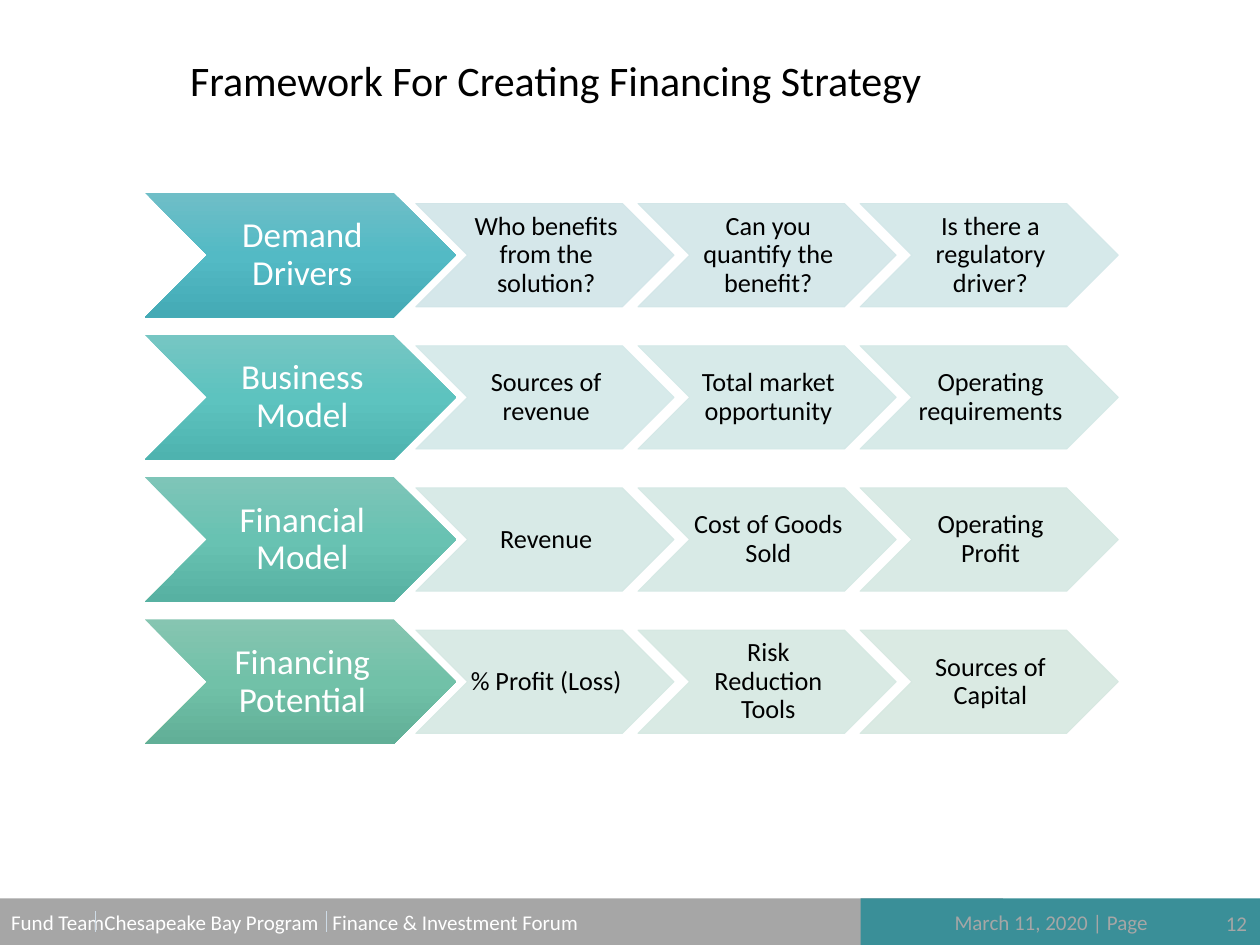
import pptx
import pptx.util
import pptx.dml.color
import pptx.enum.shapes
import pptx.enum.text
import pptx.oxml
import pptx.oxml.ns
import lxml.etree

Inches, Pt = pptx.util.Inches, pptx.util.Pt
SHAPE = pptx.enum.shapes.MSO_SHAPE
ALIGN = pptx.enum.text.PP_ALIGN
ANCHOR = pptx.enum.text.MSO_ANCHOR
qn = pptx.oxml.ns.qn

# Content: stage, its gradient, then steps with their tints
TITLE = "Framework For Creating Financing Strategy"
ROWS = [
    ("Demand Drivers", ("6FBEC7", "53BAC5", "44AAB5"),
     [("Who benefits from the solution?", "D1E5E8"),
      ("Can you quantify the benefit?", "D2E6E8"),
      ("Is there a regulatory driver?", "D2E7E8")]),
    ("Business Model", ("76C6C3", "5DC3BF", "4EB3AF"),
     [("Sources of revenue", "D3E8E8"),
      ("Total market opportunity", "D3E8E7"),
      ("Operating requirements", "D3E8E6")]),
    ("Financial Model", ("7EC5B8", "68C2B2", "57B1A2"),
     [("Revenue", "D4E8E5"),
      ("Cost of Goods Sold", "D4E8E4"),
      ("Operating Profit", "D5E8E3")]),
    ("Financing Potential", ("86C5B1", "71C1A8", "61AF97"),
     [("% Profit (Loss)", "D5E8E3"),
      ("Risk Reduction Tools", "D5E8E2"),
      ("Sources of Capital", "D6E8E1")]),
]
FOOTER = ["Fund Team", "Chesapeake Bay Program", "Finance & Investment Forum"]
FOOTER_TABS = [0.74, 2.55]
SEPARATORS = [0.76, 2.59]
DATE = "March 11, 2020 | Page"
PAGE_NUMBER = "12"

THEME = {
    "font": "Calibri", "dark": "000000", "light": "FFFFFF",
    "gray": "A6A6A6", "teal": "3A8F98", "rule": "CEDBE6",
    "title": 24, "stage": 20, "step": 15, "footer": 12,
    "opacity": 90, "spacing": 0.9,
}

# Layout in inches
LEFT, TOP = 1.15, 1.53
STAGE_W, STAGE_H = 2.47, 0.99
STEP_LEFT, STEP_W, STEP_H = 3.3, 2.05, 0.82
ROW_PITCH = STAGE_H * 1.14
STEP_PITCH = STEP_W * 0.86
FOOTER_TOP, FOOTER_H = 7.13, 0.38

deck = pptx.Presentation()
deck.slide_width, deck.slide_height = Inches(10), Inches(7.5)
page = deck.slides.add_slide(deck.slide_layouts[6])


def rgb(value):
    return pptx.dml.color.RGBColor.from_string(value)


def write(box, text, size, color, align=ALIGN.LEFT, anchor=ANCHOR.TOP,
          insets=(0.1, 0.05, 0.1, 0.05), spacing=None, tabs=()):
    frame = box.text_frame
    frame.word_wrap = True
    frame.vertical_anchor = anchor
    (frame.margin_left, frame.margin_top,
     frame.margin_right, frame.margin_bottom) = map(Inches, insets)
    para = frame.paragraphs[0]
    para.alignment = align
    if spacing:
        para.line_spacing = spacing
    if tabs:
        stops = lxml.etree.SubElement(para._p.get_or_add_pPr(), qn("a:tabLst"))
        for tab in tabs:
            lxml.etree.SubElement(stops, qn("a:tab"), pos=str(Inches(tab)), algn="l")
    span = para.add_run()
    span.text = text
    span.font.name = THEME["font"]
    span.font.size = Pt(size)
    span.font.color.rgb = rgb(color)


def add_box(*place):
    return page.shapes.add_textbox(*map(Inches, place))


def add_block(kind, place, fill):
    block = page.shapes.add_shape(kind, *map(Inches, place))
    block.shadow.inherit = False
    block.fill.solid()
    block.fill.fore_color.rgb = rgb(fill)
    block.line.fill.background()
    return block


def set_gradient(block, colors):
    stops = "".join(
        f'<a:gs pos="{index * 50000}"><a:srgbClr val="{color}"/></a:gs>'
        for index, color in enumerate(colors))
    gradient = pptx.oxml.parse_xml(
        f'<a:gradFill {pptx.oxml.ns.nsdecls("a")} rotWithShape="1">'
        f'<a:gsLst>{stops}</a:gsLst><a:lin ang="5400000" scaled="0"/></a:gradFill>')
    solid = block._element.spPr.find(qn("a:solidFill"))
    solid.getparent().replace(solid, gradient)


def set_opacity(block, percent):
    for color in block._element.spPr.iter(qn("a:srgbClr")):
        lxml.etree.SubElement(color, qn("a:alpha"), val=str(percent * 1000))


# Footer bars, text and separators
bar = add_block(SHAPE.RECTANGLE, (-0.01, FOOTER_TOP, 7.97, FOOTER_H), THEME["gray"])
write(bar, "\t".join(FOOTER), THEME["footer"], THEME["light"],
      anchor=ANCHOR.MIDDLE, tabs=FOOTER_TABS)
add_block(SHAPE.RECTANGLE, (6.83, FOOTER_TOP, 3.19, FOOTER_H), THEME["teal"])
write(add_box(7.45, 7.17, 2.33, 0.18), DATE, THEME["footer"], THEME["gray"],
      align=ALIGN.RIGHT, insets=(0.1, 0.05, 0.67, 0.05))
for x in SEPARATORS:
    rule = page.shapes.add_connector(
        pptx.enum.shapes.MSO_CONNECTOR.STRAIGHT,
        Inches(x), Inches(7.23), Inches(x), Inches(7.4))
    rule.line.color.rgb = rgb(THEME["rule"])
    rule.line.width = Pt(0.5)
    lxml.etree.SubElement(rule._element.spPr, qn("a:effectLst"))

# Title
write(add_box(1.41, 0.28, 7.59, 0.75), TITLE, THEME["title"], THEME["dark"],
      anchor=ANCHOR.MIDDLE, spacing=THEME["spacing"])

# Chevron rows
centered = dict(align=ALIGN.CENTER, anchor=ANCHOR.MIDDLE, spacing=THEME["spacing"])
for row, (stage, gradient, steps) in enumerate(ROWS):
    top = TOP + row * ROW_PITCH
    chevron = add_block(SHAPE.CHEVRON, (LEFT, top, STAGE_W, STAGE_H), gradient[1])
    set_gradient(chevron, gradient)
    write(chevron, stage, THEME["stage"], THEME["light"],
          insets=(0.03, 0.01, 0, 0.01), **centered)
    step_top = top + (STAGE_H - STEP_H) / 2
    for column, (step, tint) in enumerate(steps):
        place = (STEP_LEFT + column * STEP_PITCH, step_top, STEP_W, STEP_H)
        chevron = add_block(SHAPE.CHEVRON, place, tint)
        chevron.line.color.rgb = rgb(tint)
        chevron.line.width = Pt(0.5)
        set_opacity(chevron, THEME["opacity"])
        write(chevron, step, THEME["step"], THEME["dark"],
              insets=(0.02, 0.01, 0, 0.01), **centered)

# Page number
write(add_box(9.63, 7.18, 0.61, 0.3), PAGE_NUMBER, THEME["footer"], THEME["gray"])

deck.save("out.pptx")
